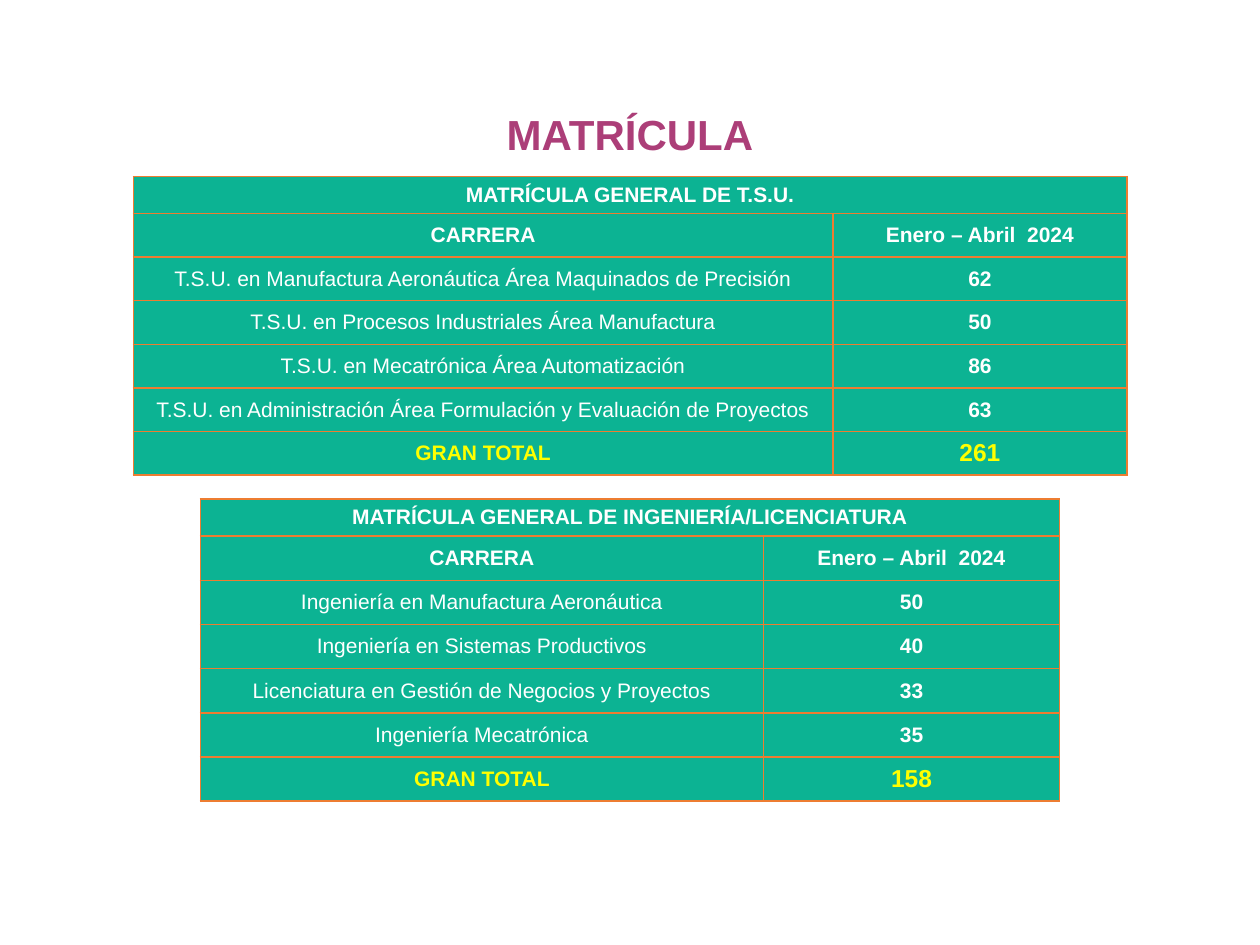
from lxml.etree import SubElement
from pptx import Presentation
from pptx.dml.color import RGBColor
from pptx.enum.text import MSO_ANCHOR as Anchor, MSO_AUTO_SIZE as AutoSize, PP_ALIGN as Align
from pptx.oxml.ns import qn
from pptx.util import Cm, Pt

GREEN, ORANGE, WHITE, YELLOW, PURPLE = "0CB393", "ED7D31", "FFFFFF", "FFFF00", "AC3E78"
PERIOD = "Enero – Abril  2024"


def color(value):
    return RGBColor.from_string(value)


def write(text_frame, text, size, text_color, bold=True):
    paragraph = text_frame.paragraphs[0]
    paragraph.alignment = Align.CENTER
    run = paragraph.add_run()
    run.text = text
    run.font.name = "Arial"
    run.font.size = Pt(size)
    run.font.bold = bold
    run.font.color.rgb = color(text_color)


def add_borders(cell, line_color):
    properties = cell._tc.get_or_add_tcPr()
    for side in ("a:lnL", "a:lnR", "a:lnT", "a:lnB"):
        line = SubElement(properties, qn(side), w=str(Pt(1)))
        fill = SubElement(line, qn("a:solidFill"))
        SubElement(fill, qn("a:srgbClr"), val=line_color)


def place_title(slide, left, top, width, height, text):
    title = slide.shapes.title
    title.left, title.top, title.width, title.height = map(Cm, (left, top, width, height))
    title.text_frame.word_wrap = True
    title.text_frame.auto_size = AutoSize.NONE
    title.text_frame.vertical_anchor = Anchor.MIDDLE
    write(title.text_frame, text, 24, PURPLE)


def place_enrollment(slide, left, top, column_widths, heading_height, row_height, heading, careers):
    total = sum(count for _, count in careers)
    rows = [(heading, ""), ("CARRERA", PERIOD), *careers, ("GRAN TOTAL", total)]
    height = heading_height + row_height * (len(rows) - 1)
    frame = slide.shapes.add_table(
        len(rows), 2, Cm(left), Cm(top), Cm(sum(column_widths)), Cm(height))
    table = frame.table
    for column, width in zip(table.columns, column_widths):
        column.width = Cm(width)
    table.cell(0, 0).merge(table.cell(0, 1))

    last = len(rows) - 1
    for row_index, values in enumerate(rows):
        table.rows[row_index].height = Cm(heading_height if row_index == 0 else row_height)
        is_total = row_index == last
        is_career = 1 < row_index < last
        for column_index, value in enumerate(values):
            cell = table.cell(row_index, column_index)
            add_borders(cell, ORANGE)
            cell.fill.solid()
            cell.fill.fore_color.rgb = color(GREEN)
            cell.vertical_anchor = Anchor.MIDDLE
            if cell.is_spanned:
                continue
            write(
                cell.text_frame,
                str(value),
                size=14 if is_total and column_index == 1 else 12,
                text_color=YELLOW if is_total else WHITE,
                bold=not (is_career and column_index == 0),
            )


def main():
    presentation = Presentation()
    presentation.slide_width, presentation.slide_height = Cm(25.4), Cm(19.05)
    slide = presentation.slides.add_slide(presentation.slide_layouts[5])

    place_title(slide, 5.1, 2.05, 15.2, 1.27, "MATRÍCULA")
    place_enrollment(
        slide, 2.69, 3.56, (14.1, 5.93), 0.74, 0.88,
        "MATRÍCULA GENERAL DE T.S.U.",
        [
            ("T.S.U. en Manufactura Aeronáutica Área Maquinados de Precisión", 62),
            ("T.S.U. en Procesos Industriales Área Manufactura", 50),
            ("T.S.U. en Mecatrónica Área Automatización", 86),
            ("T.S.U. en Administración Área Formulación y Evaluación de Proyectos", 63),
        ],
    )
    place_enrollment(
        slide, 4.04, 10.06, (11.35, 5.97), 0.75, 0.89,
        "MATRÍCULA GENERAL DE INGENIERÍA/LICENCIATURA",
        [
            ("Ingeniería en Manufactura Aeronáutica", 50),
            ("Ingeniería en Sistemas Productivos", 40),
            ("Licenciatura en Gestión de Negocios y Proyectos", 33),
            ("Ingeniería Mecatrónica", 35),
        ],
    )
    presentation.save("out.pptx")


if __name__ == "__main__":
    main()
